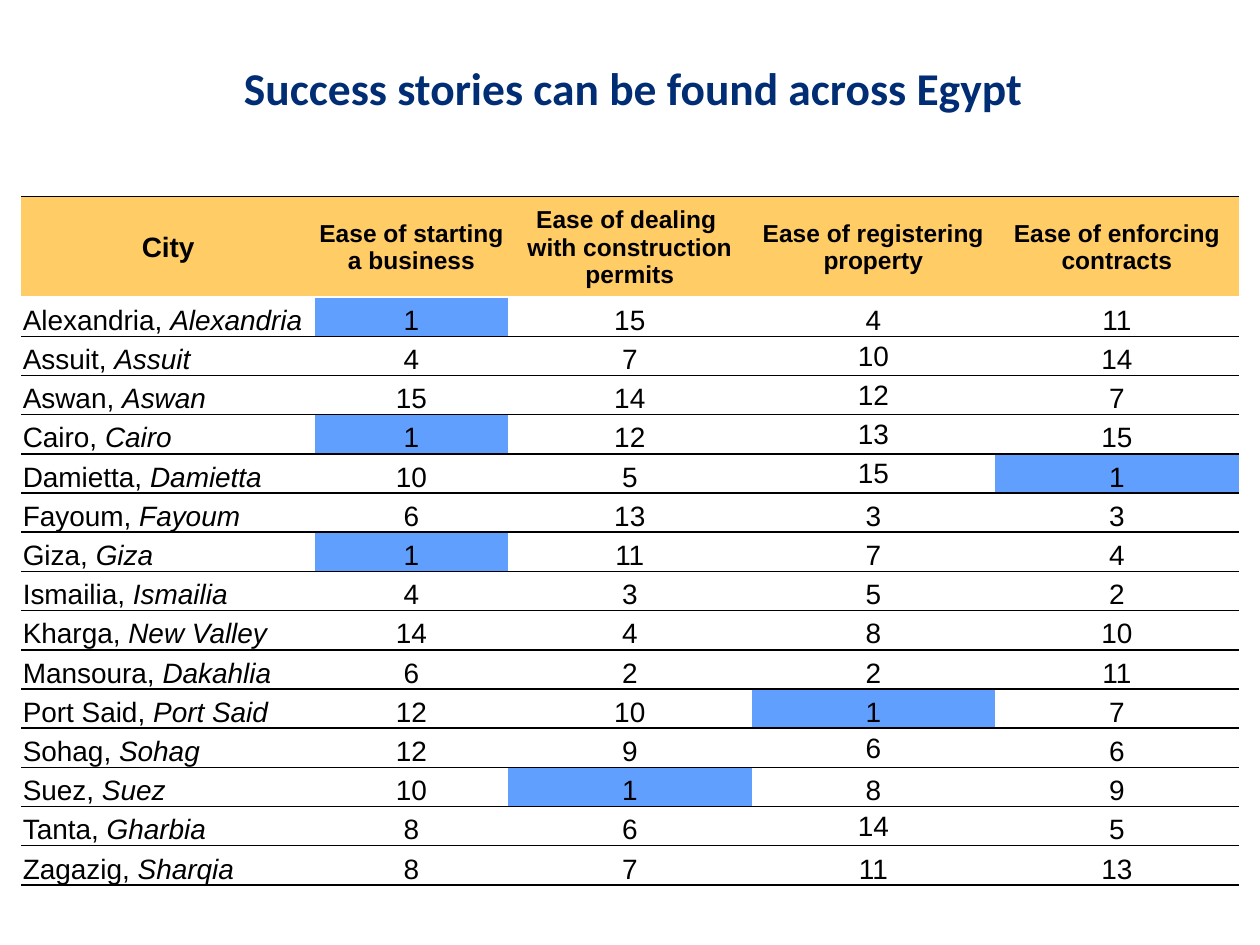
from lxml import etree
from pptx import Presentation
from pptx.dml.color import RGBColor
from pptx.enum.text import MSO_ANCHOR, MSO_AUTO_SIZE, PP_ALIGN
from pptx.oxml.ns import qn
from pptx.util import Cm, Pt

CENTER, JUSTIFY = PP_ALIGN.CENTER, PP_ALIGN.JUSTIFY
MIDDLE, BOTTOM = MSO_ANCHOR.MIDDLE, MSO_ANCHOR.BOTTOM
NO_AUTOFIT = MSO_AUTO_SIZE.NONE

COLORS = {
    "title": "002D74",
    "text": "000000",
    "header": "FFCC66",
    "city": "FFFFFF",
    "best": "619FFF",
    "rule": "000000",
    "header_rule": "FFFFFF",
}
PLAIN_TABLE_STYLE = "{2D5ABB26-0587-4C30-8999-92F81FD0307C}"
TITLE_ONLY = 5

COLUMN_WIDTHS = [5.92, 3.89, 4.91, 4.91, 4.91]
HEADER_HEIGHT, ROW_HEIGHT = 2.03, 0.79
PROPERTY_COLUMN = 3

HEADERS = [
    "City",
    "Ease of starting a business",
    "Ease of dealing \nwith construction permits",
    "Ease of registering property",
    "Ease of enforcing contracts",
]
RANKINGS = [
    ("Alexandria", "Alexandria", 1, 15, 4, 11),
    ("Assuit", "Assuit", 4, 7, 10, 14),
    ("Aswan", "Aswan", 15, 14, 12, 7),
    ("Cairo", "Cairo", 1, 12, 13, 15),
    ("Damietta", "Damietta", 10, 5, 15, 1),
    ("Fayoum", "Fayoum", 6, 13, 3, 3),
    ("Giza", "Giza", 1, 11, 7, 4),
    ("Ismailia", "Ismailia", 4, 3, 5, 2),
    ("Kharga", "New Valley", 14, 4, 8, 10),
    ("Mansoura", "Dakahlia", 6, 2, 2, 11),
    ("Port Said", "Port Said", 12, 10, 1, 7),
    ("Sohag", "Sohag", 12, 9, 6, 6),
    ("Suez", "Suez", 10, 1, 8, 9),
    ("Tanta", "Gharbia", 8, 6, 14, 5),
    ("Zagazig", "Sharqia", 8, 7, 11, 13),
]
CENTERED_PROPERTY_CITIES = {"Assuit", "Aswan", "Cairo", "Damietta", "Sohag", "Tanta"}


class SlideBuilder:
    def __init__(self, deck):
        self.slide = deck.slides.add_slide(deck.slide_layouts[TITLE_ONLY])

    def set_font(self, para, size, color, name="Arial", bold=False):
        para.font.name = name
        para.font.size = Pt(size)
        para.font.bold = bold
        para.font.color.rgb = RGBColor.from_string(COLORS[color])

    def title(self, text, left, top, width, height):
        box = self.slide.shapes.title
        box.left, box.top, box.width, box.height = map(Cm, (left, top, width, height))
        frame = box.text_frame
        frame.text = text
        frame.auto_size = NO_AUTOFIT
        frame.vertical_anchor = MIDDLE
        para = frame.paragraphs[0]
        para.alignment = CENTER
        self.set_font(para, 26, "title", name="Calibri", bold=True)

    def table(self, left, top, widths, heights):
        size = map(Cm, (left, top, sum(widths), sum(heights)))
        table = self.slide.shapes.add_table(len(heights), len(widths), *size).table
        table.horz_banding = False
        table._tbl.tblPr.find(qn("a:tableStyleId")).text = PLAIN_TABLE_STYLE
        for column, width in zip(table.columns, widths):
            column.width = Cm(width)
        for row, height in zip(table.rows, heights):
            row.height = Cm(height)
        return table

    def border(self, cell, side, color):
        """Draw a 1 pt line; side is 'lnT' or 'lnB', added in that order."""
        line = etree.SubElement(cell._tc.get_or_add_tcPr(), qn(f"a:{side}"), w=str(Pt(1)))
        fill = etree.SubElement(line, qn("a:solidFill"))
        etree.SubElement(fill, qn("a:srgbClr"), val=COLORS[color])

    def cell(self, cell, spans, fill=None, top="rule", bottom="rule",
             size=16, bold=False, align=CENTER, anchor=BOTTOM):
        """Fill a cell with spans, the second of which is italic."""
        cell.margin_left = cell.margin_right = cell.margin_top = Cm(0.03)
        cell.margin_bottom = 0
        cell.vertical_anchor = anchor
        self.border(cell, "lnT", top)
        self.border(cell, "lnB", bottom)
        if fill:
            cell.fill.solid()
            cell.fill.fore_color.rgb = RGBColor.from_string(COLORS[fill])
        else:
            cell.fill.background()
        cell.text = spans[0]
        for para in cell.text_frame.paragraphs:
            para.alignment = align
            self.set_font(para, size, "text", bold=bold)
        for text in spans[1:]:
            span = para.add_run()
            span.text = text
            span.font.italic = True


def main():
    deck = Presentation()
    deck.slide_width, deck.slide_height = Cm(25.4), Cm(19.05)
    page = SlideBuilder(deck)
    page.title("Success stories can be found across Egypt ", 3.99, 0, 17.78, 3.53)

    heights = [HEADER_HEIGHT] + [ROW_HEIGHT] * len(RANKINGS)
    table = page.table(0.43, 3.96, COLUMN_WIDTHS, heights)
    for column, label in enumerate(HEADERS):
        page.cell(table.cell(0, column), [label], fill="header", bottom="header_rule",
                  size=14 if column else 16, bold=True, anchor=MIDDLE)

    for row, (city, governorate, *ranks) in enumerate(RANKINGS, start=1):
        top = "header_rule" if row == 1 else "rule"
        page.cell(table.cell(row, 0), [f"{city}, ", governorate], fill="city",
                  top=top, align=JUSTIFY)
        for column, rank in enumerate(ranks, start=1):
            raised = column == PROPERTY_COLUMN and city in CENTERED_PROPERTY_CITIES
            page.cell(table.cell(row, column), [str(rank)], top=top,
                      fill="best" if rank == 1 else None,
                      anchor=MIDDLE if raised else BOTTOM)

    deck.save("out.pptx")


if __name__ == "__main__":
    main()
